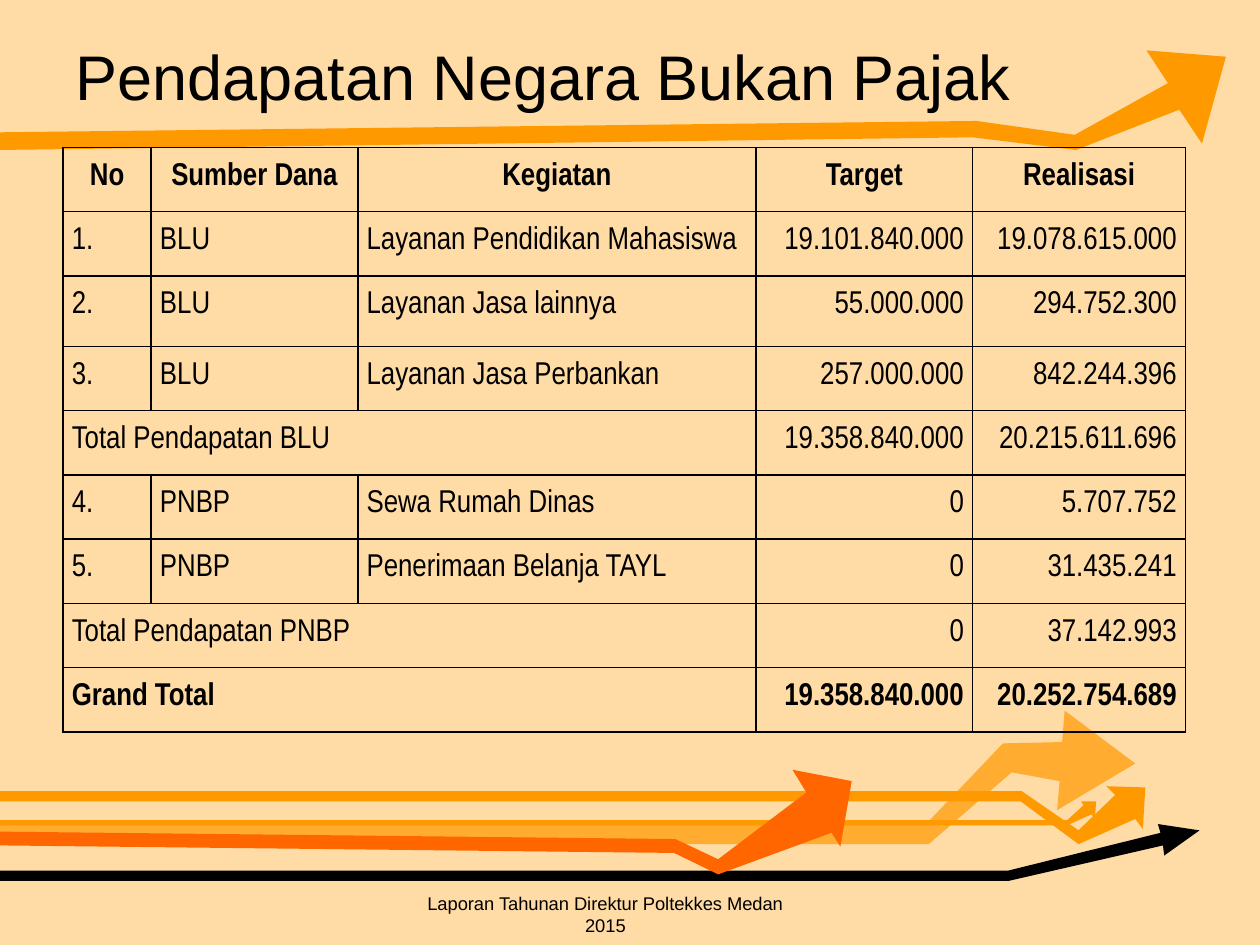
import pptx
import pptx.dml.color
import pptx.enum.text
import pptx.oxml
import pptx.oxml.ns
import pptx.util
from pptx.util import Inches

ALIGN = pptx.enum.text.PP_ALIGN
ANCHOR = pptx.enum.text.MSO_ANCHOR


def paint(color_format, color):
    color_format.rgb = pptx.dml.color.RGBColor.from_string(color)


def add_text(para, text, size, font, bold=False):
    span = para.add_run()
    span.text = text
    span.font.size = pptx.util.Pt(size)
    span.font.name = font
    span.font.bold = bold
    paint(span.font.color, "000000")


deck = pptx.Presentation()
deck.slide_width = Inches(10)
deck.slide_height = Inches(7.5)
page = deck.slides.add_slide(deck.slide_layouts[5])
page.background.fill.solid()
paint(page.background.fill.fore_color, "FFDBA6")

arrows = [
    ("FFAC31", [(0, 6.53), (7.36, 6.53), (7.96, 5.9), (8.43, 5.89), (8.45, 5.64), (9.01, 6.06),
                (8.39, 6.43), (8.41, 6.2), (8.03, 6.13), (7.37, 6.7), (0, 6.7)]),
    ("FF9900", [(0, 6.51), (8.47, 6.51), (8.6, 6.39), (8.58, 6.36), (8.7, 6.36), (8.69, 6.5),
                (8.66, 6.46), (8.67, 6.46), (8.47, 6.55), (0, 6.55)]),
    ("FF9900", [(0, 6.28), (8.11, 6.28), (8.56, 6.59), (8.85, 6.31), (8.78, 6.24), (9.09, 6.25),
                (9.07, 6.58), (9.01, 6.5), (8.56, 6.7), (8.1, 6.36), (0, 6.36)]),
    ("000000", [(0, 6.91), (8, 6.91), (9.21, 6.61), (9.19, 6.54), (9.52, 6.59), (9.24, 6.79),
                (9.23, 6.71), (8.01, 6.99), (0, 6.99)]),
    ("FF6600", [(-0.05, 6.71), (5.35, 6.77), (5.7, 6.94), (6.6, 6.61), (6.67, 6.72), (6.76, 6.2),
                (6.29, 6.11), (6.4, 6.29), (5.7, 6.82), (5.36, 6.66), (-0.08, 6.6)]),
    ("FF9900", [(0, 1.19), (7.72, 1.09), (8.54, 1.19), (9.36, 0.87), (9.54, 1.14), (9.73, 0.45),
                (9.1, 0.4), (9.27, 0.66), (8.53, 1.07), (7.75, 0.96), (0, 1.05)]),
]
for color, corners in arrows:
    points = [(Inches(x), Inches(y)) for x, y in corners]
    outline = page.shapes.build_freeform(*points[0])
    outline.add_line_segments(points[1:], close=True)
    arrow = outline.convert_to_shape()
    arrow.shadow.inherit = False
    arrow.fill.solid()
    paint(arrow.fill.fore_color, color)
    arrow.line.fill.background()

title = page.shapes.title
title.left, title.top = Inches(0.5), Inches(0.28)
title.width, title.height = Inches(9.07), Inches(0.63)
title.text_frame.vertical_anchor = ANCHOR.MIDDLE
title.text_frame.auto_size = pptx.enum.text.MSO_AUTO_SIZE.NONE
para = title.text_frame.paragraphs[0]
para.alignment = ALIGN.LEFT
add_text(para, "Pendapatan Negara Bukan Pajak", 36, "Arial")

rows = [
    ["No", "Sumber Dana", "Kegiatan", "Target", "Realisasi"],
    ["1.", "BLU", "Layanan Pendidikan Mahasiswa", "19.101.840.000", "19.078.615.000"],
    ["2.", "BLU", "Layanan Jasa lainnya", "55.000.000", "294.752.300"],
    ["3.", "BLU", "Layanan Jasa Perbankan", "257.000.000", "842.244.396"],
    ["Total Pendapatan BLU", None, None, "19.358.840.000", "20.215.611.696"],
    ["4.", "PNBP", "Sewa Rumah Dinas", "0", "5.707.752"],
    ["5.", "PNBP", "Penerimaan Belanja TAYL", "0", "31.435.241"],
    ["Total Pendapatan PNBP", None, None, "0", "37.142.993"],
    ["Grand Total", None, None, "19.358.840.000", "20.252.754.689"],
]
widths = [0.7, 1.64, 3.16, 1.72, 1.69]
table = page.shapes.add_table(len(rows), len(widths), Inches(0.5), Inches(1.17),
                              Inches(8.92), Inches(4.67)).table
table.first_row = False
table.horz_banding = False
for column, width in zip(table.columns, widths):
    column.width = Inches(width)

for r, values in enumerate(rows):
    table.rows[r].height = Inches(0.56 if r == 2 else 0.51)
    if values[1] is None:
        table.cell(r, 0).merge(table.cell(r, 2))
    for c, value in enumerate(values):
        cell = table.cell(r, c)
        cell.fill.background()
        cell.margin_left = cell.margin_right = Inches(0.07)
        cell.margin_top = cell.margin_bottom = 0
        for position, side in enumerate(["lnL", "lnR", "lnT", "lnB"]):
            border = pptx.oxml.parse_xml(
                f'<a:{side} {pptx.oxml.ns.nsdecls("a")} w="12700"><a:solidFill>'
                f'<a:srgbClr val="000000"/></a:solidFill></a:{side}>')
            cell._tc.get_or_add_tcPr().insert(position, border)
        if value is None:
            continue
        para = cell.text_frame.paragraphs[0]
        para.line_spacing = 1.5
        if r == 0:
            para.alignment = ALIGN.CENTER
        else:
            para.alignment = ALIGN.RIGHT if c >= 3 else ALIGN.JUSTIFY
        add_text(para, value, 18, "Arial Narrow", bold=r in (0, len(rows) - 1))

footer = page.shapes.add_textbox(Inches(3.22), Inches(7.03), Inches(3.17), Inches(0.31))
footer.text_frame.word_wrap = True
para = footer.text_frame.paragraphs[0]
para.alignment = ALIGN.CENTER
add_text(para, "Laporan Tahunan Direktur Poltekkes Medan 2015", 10.5, "Arial")

deck.save("out.pptx")
